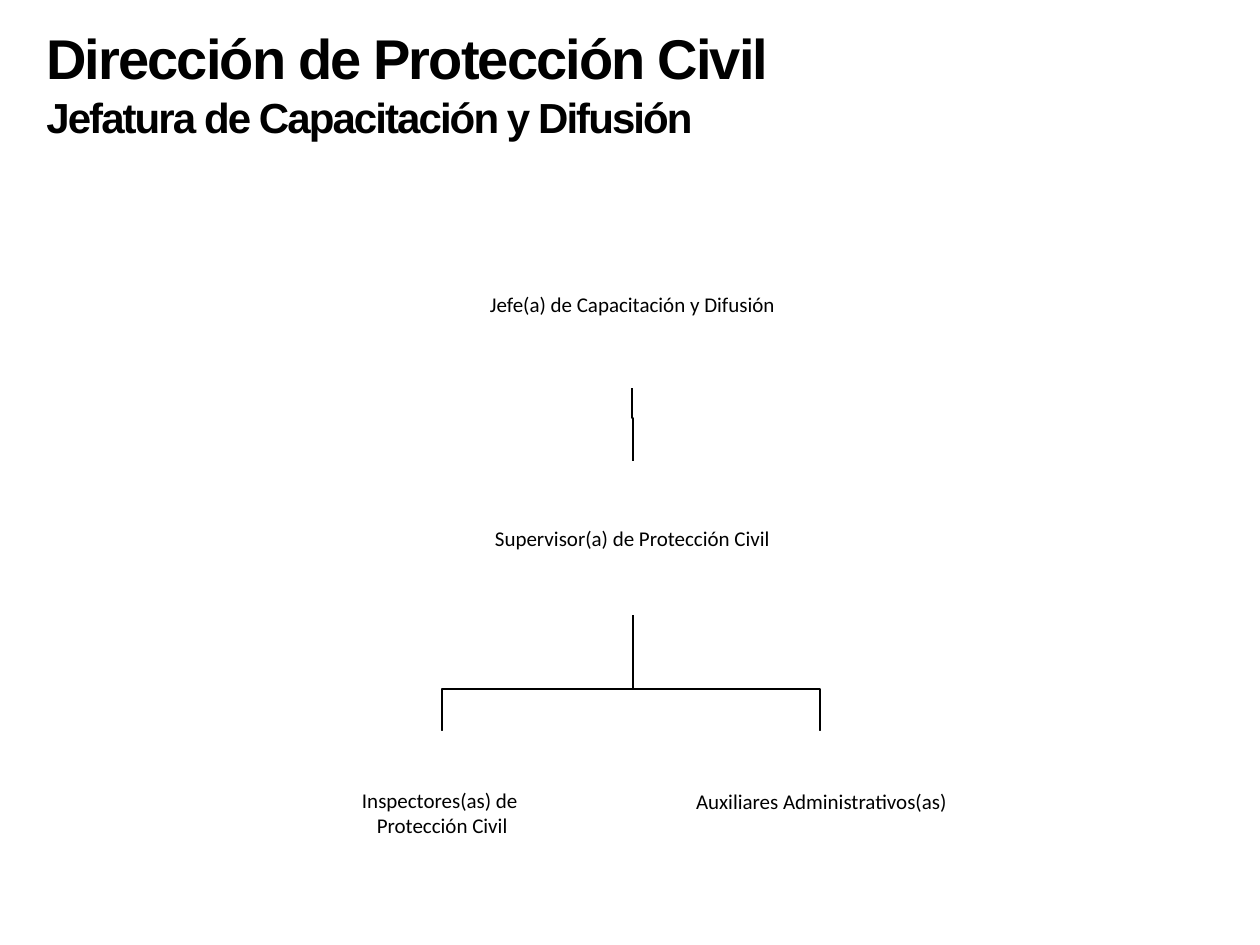
from pptx import Presentation
from pptx.dml.color import RGBColor
from pptx.enum.shapes import MSO_SHAPE
from pptx.enum.text import MSO_ANCHOR, MSO_AUTO_SIZE, PP_ALIGN
from pptx.util import Inches, Pt

BLACK = RGBColor(0, 0, 0)
WHITE = RGBColor(255, 255, 255)

presentation = Presentation()
presentation.slide_width = Inches(10)
presentation.slide_height = Inches(7.5)
slide = presentation.slides.add_slide(presentation.slide_layouts[6])

column = presentation.slide_width / 100
row = presentation.slide_height / 75


def place(left, top, width, height):
    return [round(left * column), round(top * row), round(width * column), round(height * row)]


def style_font(font, name, size, bold):
    font.name = name
    font.size = Pt(size)
    font.bold = bold
    font.color.rgb = BLACK


trunk = 50.23
chief_bottom, supervisor_top, supervisor_bottom = 30.8, 36.6, 48.8
branch_row, staff_top = 54.7, 58
links = [
    [(trunk, supervisor_bottom), (trunk, branch_row), (65.1, branch_row), (65.1, staff_top)],
    [(trunk, supervisor_bottom), (trunk, branch_row), (35.1, branch_row), (35.1, staff_top)],
    [(50.15, chief_bottom), (50.15, 33.2), (trunk, 33.2), (trunk, supervisor_top)],
]
for link in links:
    points = [(round(x * column), round(y * row)) for x, y in link]
    builder = slide.shapes.build_freeform(*points[0])
    builder.add_line_segments(points[1:], close=False)
    shape = builder.convert_to_shape()
    shape.shadow.inherit = False
    shape.fill.background()
    shape.line.color.rgb = BLACK
    shape.line.width = Pt(1)

positions = [
    ("Jefe(a) de Capacitación y Difusión", 36.2, 17.4, 28, 13.4, False, 0.01),
    ("Supervisor(a) de Protección Civil", 38, supervisor_top, 24.4, 12.2, True, 0.01),
    ("Inspectores(as) de \vProtección Civil", 23.3, staff_top, 23.6, 13, True, 0.01),
    ("Auxiliares Administrativos(as)", 53.4, staff_top, 23.6, 13, True, 0.2),
]
for text, left, top, width, height, filled, bottom_margin in positions:
    shape = slide.shapes.add_shape(MSO_SHAPE.RECTANGLE, *place(left, top, width, height))
    shape.shadow.inherit = False
    shape.line.fill.background()
    if filled:
        shape.fill.solid()
        shape.fill.fore_color.rgb = WHITE
    else:
        shape.fill.background()
    frame = shape.text_frame
    frame.word_wrap = True
    frame.vertical_anchor = MSO_ANCHOR.MIDDLE
    frame.margin_left = frame.margin_right = frame.margin_top = Inches(0.01)
    frame.margin_bottom = Inches(bottom_margin)
    paragraph = frame.paragraphs[0]
    paragraph.text = text
    paragraph.alignment = PP_ALIGN.CENTER
    style_font(paragraph.font, "Calibri", 12, False)

title = slide.shapes.add_textbox(*place(2.7, 1.4, 79.6, 10.4))
frame = title.text_frame
frame.word_wrap = True
frame.auto_size = MSO_AUTO_SIZE.SHAPE_TO_FIT_TEXT
frame.text = "Dirección de Protección Civil\nJefatura de Capacitación y Difusión"
for paragraph, size in zip(frame.paragraphs, (32, 24)):
    style_font(paragraph.font, "Arial", size, True)
    for run in paragraph.runs:
        run._r.get_or_add_rPr().set("spc", "-110")

presentation.save("out.pptx")
